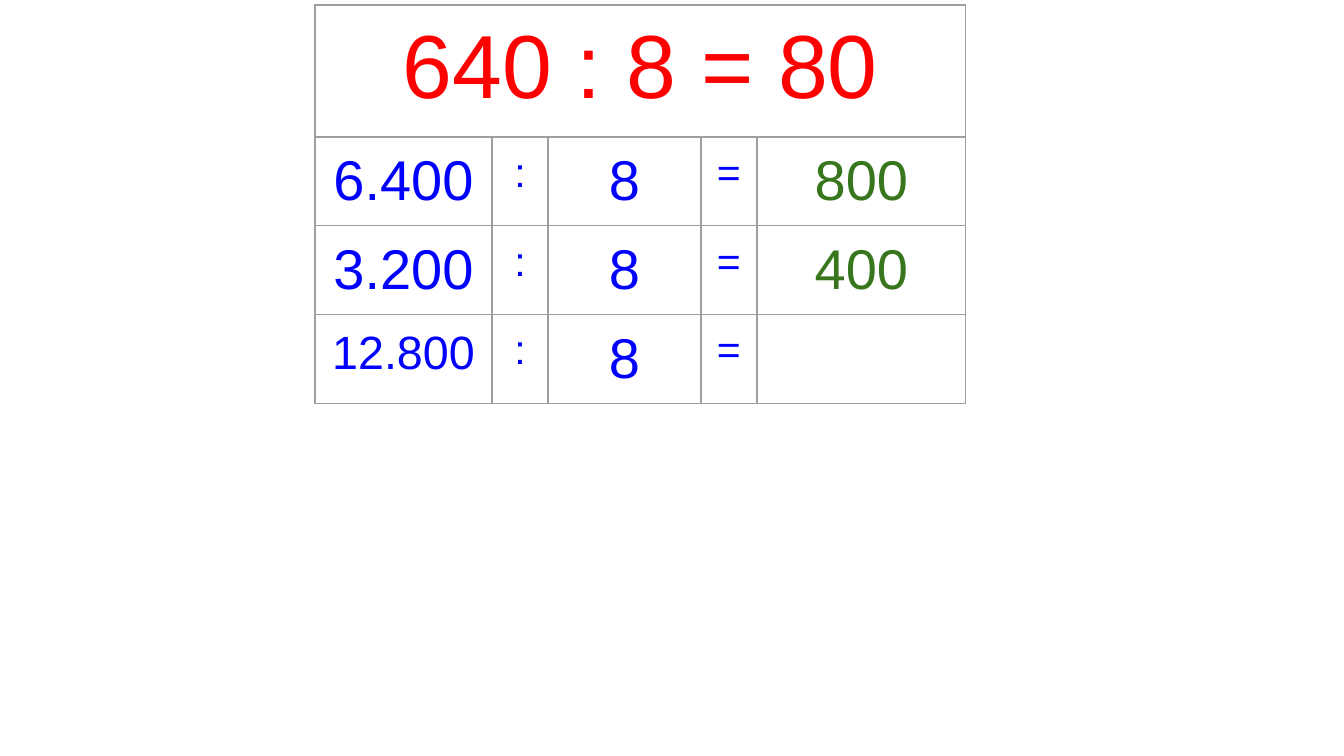
from dataclasses import dataclass

from lxml.etree import SubElement
from pptx import Presentation
from pptx.dml.color import RGBColor as RGB
from pptx.enum.text import PP_ALIGN as Align
from pptx.oxml.ns import qn
from pptx.util import Pt

EMU_PER_PX = 914400 / 134.4


@dataclass(frozen=True)
class Theme:
    font: str = "Arial"
    title: str = "FF0000"
    task: str = "0000FF"
    answer: str = "38761D"
    border: str = "9E9E9E"
    border_pt: float = 0.75
    title_pt: int = 48
    number_pt: int = 30
    long_number_pt: int = 25
    sign_pt: int = 22


THEME = Theme()
COLUMNS = [177, 56, 153, 56, 209]
ROWS = [132, 89, 89, 89]
EXERCISES = [("6.400", "8", "800"), ("3.200", "8", "400"), ("12.800", "8", "")]


def px(n):
    return round(n * EMU_PER_PX)


def style_cell(cell):
    """Clear the fill, set even margins and draw the four borders."""
    cell.margin_left = cell.margin_right = px(13)
    cell.margin_top = cell.margin_bottom = px(13)
    props = cell._tc.get_or_add_tcPr()
    for side in ("a:lnL", "a:lnR", "a:lnT", "a:lnB"):
        ln = SubElement(props, qn(side), w=str(Pt(THEME.border_pt)))
        fill = SubElement(ln, qn("a:solidFill"))
        SubElement(fill, qn("a:srgbClr"), val=THEME.border)
    cell.fill.background()


def write_cell(cell, text, size, color):
    p = cell.text_frame.paragraphs[0]
    p.text = text
    p.alignment = Align.CENTER
    for r in p.runs:
        r.font.name = THEME.font
        r.font.size = Pt(size)
        r.font.color.rgb = RGB.from_string(color)


def add_grid(slide, left, top):
    frame = slide.shapes.add_table(len(ROWS), len(COLUMNS), px(left), px(top),
                                   px(sum(COLUMNS)), px(sum(ROWS)))
    table = frame.table
    table.first_row = table.horz_banding = False
    for column, width in zip(table.columns, COLUMNS):
        column.width = px(width)
    for row, height in zip(table.rows, ROWS):
        row.height = px(height)
    for cell in table.iter_cells():
        style_cell(cell)
    return table


def fill_exercise(table, row, dividend, divisor, quotient):
    size = THEME.long_number_pt if len(dividend) > 5 else THEME.number_pt
    entries = [
        (dividend, size, THEME.task),
        (":", THEME.sign_pt, THEME.task),
        (divisor, THEME.number_pt, THEME.task),
        ("=", THEME.sign_pt, THEME.task),
        (quotient, THEME.number_pt, THEME.answer),
    ]
    for col, entry in enumerate(entries):
        if entry[0]:
            write_cell(table.cell(row, col), *entry)


def main():
    prs = Presentation()
    prs.slide_width, prs.slide_height = px(1344), px(756)
    slide = prs.slides.add_slide(prs.slide_layouts[6])

    # Worked example across the top row
    table = add_grid(slide, 315, 5)
    title = table.cell(0, 0)
    title.merge(table.cell(0, len(COLUMNS) - 1))
    write_cell(title, "640 : 8 = 80", THEME.title_pt, THEME.title)

    # Related divisions below
    for row, exercise in enumerate(EXERCISES, start=1):
        fill_exercise(table, row, *exercise)

    prs.save("out.pptx")


if __name__ == "__main__":
    main()
